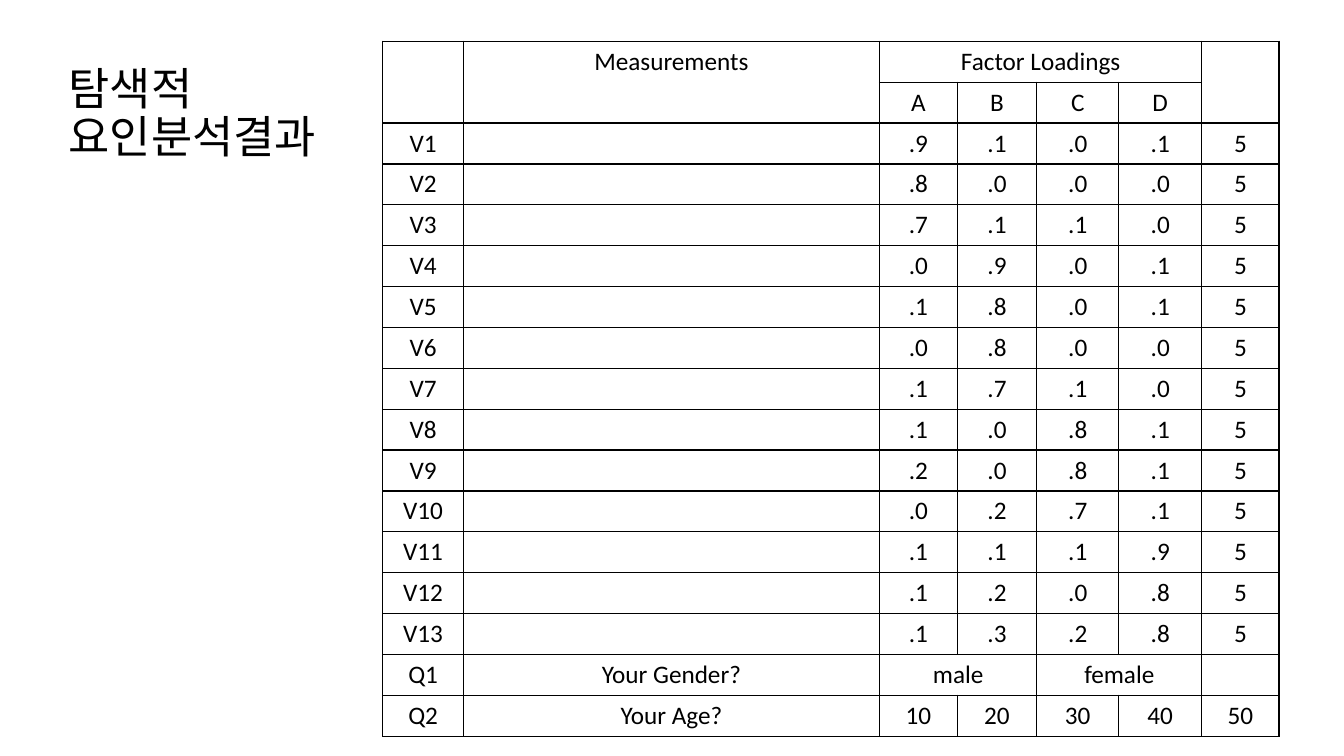
from lxml import etree
from pptx import Presentation
from pptx.dml.color import RGBColor
from pptx.enum.text import MSO_ANCHOR, PP_ALIGN
from pptx.oxml.ns import qn
from pptx.util import Pt

TITLE = "탐색적 요인분석결과"
HEAD = [
    ["", "Measurements", "Factor Loadings", "", "", "", ""],
    ["", "", "A", "B", "C", "D", ""],
]
LOADS = [
    ".9 .1 .0 .1",
    ".8 .0 .0 .0",
    ".7 .1 .1 .0",
    ".0 .9 .0 .1",
    ".1 .8 .0 .1",
    ".0 .8 .0 .0",
    ".1 .7 .1 .0",
    ".1 .0 .8 .1",
    ".2 .0 .8 .1",
    ".0 .2 .7 .1",
    ".1 .1 .1 .9",
    ".1 .2 .0 .8",
    ".1 .3 .2 .8",
]
SCALE = "5"
ASKED = [
    ["Q1", "Your Gender?", "male", "", "female", "", ""],
    ["Q2", "Your Age?", "10", "20", "30", "40", "50"],
]
SPANS = [
    (0, 0, 1, 0),
    (0, 1, 1, 1),
    (0, 2, 0, 5),
    (0, 6, 1, 6),
    (15, 2, 15, 3),
    (15, 4, 15, 5),
]
WIDTHS = [57.5, 297.3, 55.4, 57, 58.4, 59.4, 55.2]
ROW = 29.2
LEFT, TOP = 273.5, 29.5
FONT = "Calibri"
BLACK = RGBColor(0, 0, 0)
CENTER = PP_ALIGN.CENTER
MIDDLE = MSO_ANCHOR.MIDDLE
SIDES = ("a:lnL", "a:lnR", "a:lnT", "a:lnB")


def style(para, size):
    para.font.size = Pt(size)
    para.font.name = FONT
    para.font.color.rgb = BLACK


def border(cell):
    props = cell._tc.get_or_add_tcPr()
    for side in SIDES:
        line = etree.SubElement(props, qn(side), w=str(Pt(1)))
        fill = etree.SubElement(line, qn("a:solidFill"))
        etree.SubElement(fill, qn("a:srgbClr"), val=str(BLACK))


def add_title(slide):
    box = slide.shapes.add_textbox(Pt(42), Pt(30), Pt(212), Pt(104.5))
    frame = box.text_frame
    frame.word_wrap = True
    frame.vertical_anchor = MIDDLE
    para = frame.paragraphs[0]
    para.text = TITLE
    para.line_spacing = 0.9
    style(para, 32)


def add_grid(slide):
    body = [[f"V{n}", "", *loads.split(), SCALE]
            for n, loads in enumerate(LOADS, 1)]
    rows = HEAD + body + ASKED
    table = slide.shapes.add_table(
        len(rows), len(WIDTHS), Pt(LEFT), Pt(TOP),
        Pt(sum(WIDTHS)), Pt(ROW * len(rows))).table
    table.first_row = False
    table.horz_banding = False
    for col, width in zip(table.columns, WIDTHS):
        col.width = Pt(width)
    for r, row in enumerate(rows):
        table.rows[r].height = Pt(ROW)
        for c, text in enumerate(row):
            cell = table.cell(r, c)
            border(cell)
            cell.fill.background()
            para = cell.text_frame.paragraphs[0]
            para.text = text
            para.alignment = CENTER
            style(para, 18)
    for r, c, end, last in SPANS:
        table.cell(r, c).merge(table.cell(end, last))


def main():
    deck = Presentation()
    deck.slide_width, deck.slide_height = Pt(960), Pt(540)
    slide = deck.slides.add_slide(deck.slide_layouts[6])
    add_title(slide)
    add_grid(slide)
    deck.save("out.pptx")


if __name__ == "__main__":
    main()
